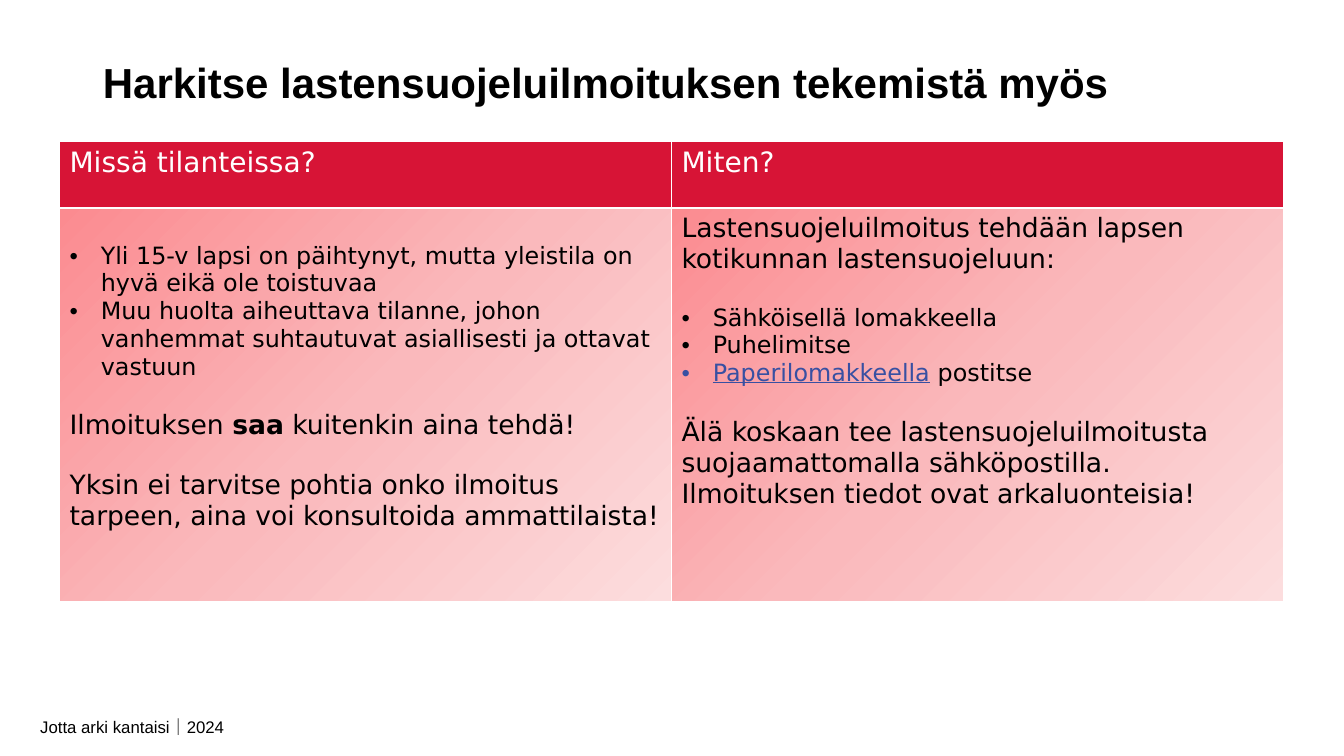
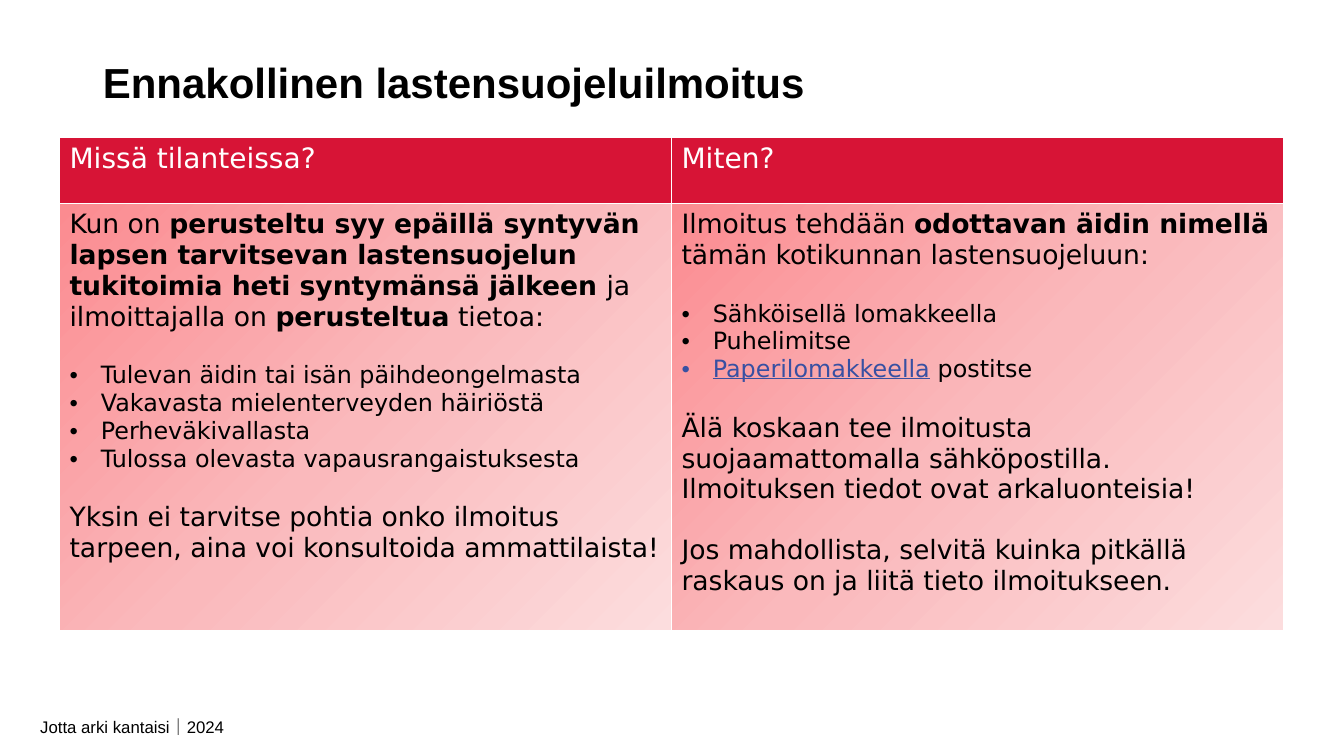
from pptx import Presentation
from pptx.dml.color import RGBColor
from pptx.enum import text
from pptx.oxml import parse_xml
from pptx.oxml.ns import nsdecls
from pptx.util import Inches, Pt

RED = RGBColor(0xD7, 0x14, 0x36)
WHITE = RGBColor(0xFF, 0xFF, 0xFF)
BLACK = RGBColor(0x00, 0x00, 0x00)
BLUE = RGBColor(0x38, 0x50, 0xA2)
STOPS = [
    (0, RGBColor(0xFB, 0x8B, 0x90)),
    (50, RGBColor(0xFA, 0xB9, 0xBC)),
    (100, RGBColor(0xFC, 0xDD, 0xDE)),
]
GAP = Pt(21)
HANG = Inches(0.31)
HEADS = ["Missä tilanteissa?", "Miten?"]
CONSULT = ("body", "Yksin ei tarvitse pohtia onko ilmoitus tarpeen, aina voi konsultoida ammattilaista!")
WAYS = [
    ("item", "Sähköisellä lomakkeella"),
    ("item", "Puhelimitse"),
    ("item", "*Paperilomakkeella* postitse"),
]
PAGES = [
    {
        "title": "Harkitse lastensuojeluilmoituksen tekemistä myös",
        "top": 1.4,
        "height": 3.91,
        "cells": [
            [
                ("item", "Yli 15-v lapsi on päihtynyt, mutta yleistila on hyvä eikä ole toistuvaa"),
                ("item", "Muu huolta aiheuttava tilanne, johon vanhemmat suhtautuvat asiallisesti ja ottavat vastuun"),
                ("body", "Ilmoituksen *saa* kuitenkin aina tehdä!"),
                CONSULT,
            ],
            [
                ("body", "Lastensuojeluilmoitus tehdään lapsen kotikunnan lastensuojeluun:"),
                *WAYS,
                ("body", "Älä koskaan tee lastensuojeluilmoitusta suojaamattomalla sähköpostilla. "
                         "Ilmoituksen tiedot ovat arkaluonteisia!"),
            ],
        ],
    },
    {
        "title": "Ennakollinen lastensuojeluilmoitus",
        "top": 1.36,
        "height": 4.24,
        "cells": [
            [
                ("body", "Kun on *perusteltu syy epäillä syntyvän lapsen tarvitsevan lastensuojelun "
                         "tukitoimia heti syntymänsä jälkeen *ja ilmoittajalla on *perusteltua* tietoa:"),
                ("item", "Tulevan äidin tai isän päihdeongelmasta"),
                ("item", "Vakavasta mielenterveyden häiriöstä"),
                ("item", "Perheväkivallasta"),
                ("item", "Tulossa olevasta vapausrangaistuksesta"),
                CONSULT,
            ],
            [
                ("body", "Ilmoitus tehdään *odottavan äidin nimellä *tämän kotikunnan lastensuojeluun:"),
                *WAYS,
                ("body", "Älä koskaan tee ilmoitusta suojaamattomalla sähköpostilla. "
                         "Ilmoituksen tiedot ovat arkaluonteisia!"),
                ("body", "Jos mahdollista, selvitä kuinka pitkällä raskaus on ja liitä tieto ilmoitukseen."),
            ],
        ],
    },
]


def style(run, size, color, bold=False, face="DejaVu Sans"):
    run.font.name = face
    run.font.size = Pt(size)
    run.font.bold = bold
    run.font.color.rgb = color


def border(cell):
    for side in ("lnL", "lnR", "lnT", "lnB"):
        cell._tc.get_or_add_tcPr().append(parse_xml(
            f'<a:{side} {nsdecls("a")} w="{Pt(1.5)}"><a:solidFill>'
            f'<a:srgbClr val="{WHITE}"/></a:solidFill></a:{side}>'))


deck = Presentation()
deck.slide_width, deck.slide_height = Inches(13.33), Inches(7.5)
layout = deck.slide_layouts[5]
for holder in list(layout.placeholders):
    if holder.placeholder_format.idx:
        holder.element.getparent().remove(holder.element)
    else:
        holder.left, holder.top = Inches(0.92), Inches(0.39)
        holder.width, holder.height = Inches(11.5), Inches(0.85)
        holder.text_frame.vertical_anchor = text.MSO_ANCHOR.MIDDLE

for page in PAGES:
    slide = deck.slides.add_slide(layout)
    title = slide.shapes.title.text_frame
    title.text = page["title"]
    title.paragraphs[0].alignment = text.PP_ALIGN.LEFT
    style(title.paragraphs[0].runs[0], 30, BLACK, True, "Arial")

    table = slide.shapes.add_table(
        2, 2, Inches(0.59), Inches(page["top"]),
        Inches(12.14), Inches(0.66 + page["height"])).table
    table.rows[0].height = Inches(0.66)
    table.rows[1].height = Inches(page["height"])

    for col, (head, paras) in enumerate(zip(HEADS, page["cells"])):
        table.columns[col].width = Inches(6.07)
        cell = table.cell(0, col)
        border(cell)
        cell.fill.solid()
        cell.fill.fore_color.rgb = RED
        cell.text_frame.text = head
        style(cell.text_frame.paragraphs[0].runs[0], 20, WHITE)

        cell = table.cell(1, col)
        border(cell)
        stops = "".join(
            f'<a:gs pos="{pos * 1000}"><a:srgbClr val="{color}"/></a:gs>'
            for pos, color in STOPS)
        cell._tc.get_or_add_tcPr().append(parse_xml(
            f'<a:gradFill {nsdecls("a")} rotWithShape="1"><a:gsLst>{stops}</a:gsLst>'
            '<a:lin ang="2700000" scaled="0"/></a:gradFill>'))
        if paras[0][0] == "item":
            cell.margin_top = Inches(0.34)

        frame = cell.text_frame
        last = None
        for kind, words in paras:
            para = frame.add_paragraph() if last else frame.paragraphs[0]
            if last and (kind, last) != ("item", "item"):
                para.space_before = GAP
            if kind == "item":
                props = para._p.get_or_add_pPr()
                props.set("marL", str(HANG))
                props.set("indent", str(-HANG))
                props.append(parse_xml(f'<a:buFont {nsdecls("a")} typeface="Arial"/>'))
                props.append(parse_xml(f'<a:buChar {nsdecls("a")} char="•"/>'))
            for spot, part in enumerate(words.split("*")):
                if not part:
                    continue
                run = para.add_run()
                run.text = part
                marked = spot % 2 == 1
                if kind == "body":
                    style(run, 19, BLACK, marked)
                else:
                    style(run, 17, BLUE if marked else BLACK)
                    run.font.underline = marked
            last = kind

footer = deck.slides[0].shapes.add_textbox(
    Inches(0.3), Inches(7.06), Inches(4.65), Inches(0.3))
footer.text_frame.word_wrap = True
footer.text_frame.text = "Jotta arki kantaisi｜2024"
style(footer.text_frame.paragraphs[0].runs[0], 12, BLACK, face="Arial")
layout.shapes.element.append(footer.element)

deck.save("out.pptx")
